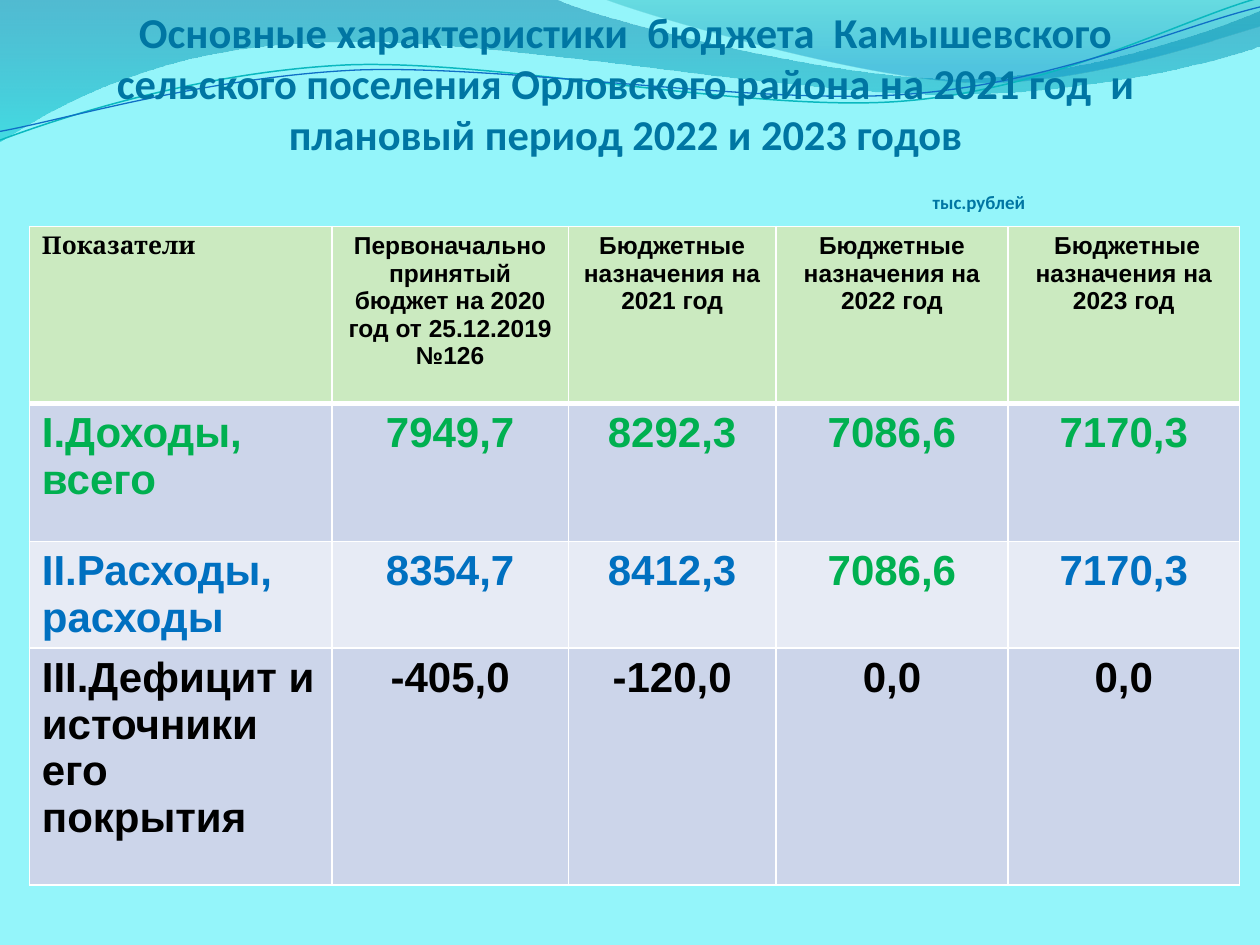
from lxml import etree
from pptx import Presentation
from pptx.dml.color import RGBColor
from pptx.enum.text import MSO_ANCHOR, MSO_AUTO_SIZE, PP_ALIGN
from pptx.oxml import parse_xml
from pptx.oxml.ns import nsdecls, qn
from pptx.util import Pt

CENTER, LEFT = PP_ALIGN.CENTER, PP_ALIGN.LEFT
BOTTOM, NO_AUTOFIT = MSO_ANCHOR.BOTTOM, MSO_AUTO_SIZE.NONE
TITLE_ONLY = 5
WAVE_TILT = -2.7
GREEN, BLUE, BLACK, WHITE = "00B050", "0070C0", "000000", "FFFFFF"
TITLE_COLOR = "0076A3"

FILLED_WAVES = [
    ([(0, 0), (317, -0.7), (343, 12, 478, 45, 546, 45), (614, 45, 690, 19, 720, 6),
      (720.7, 26), (708, 32, 626, 54.5, 537, 54), (446, 54, 275, 20, 185, 24.5),
      (93, 26, 33, 60, -0.7, 81.4)],
     [(0, "0074A1", 45), (100, "00C6CF", 55)]),
    ([(345, -0.7), (366, 8, 491, 45, 554, 47), (616, 49.5, 692, 23, 720, 15), (720, 0)],
     [(0, "00A1A9", 30), (80, "008BBF", 45)]),
]
LINE_WAVES = [
    ([(-1.4, 63.1), (34.2, 51.7, 114.3, 29.4, 199.4, 29.5),
      (284.4, 30.5, 425.8, 67.2, 512, 65.2), (599.2, 63.3, 676, 25.9, 720.6, 15.9)],
     "0AB8BF", 0.85),
    ([(-1.1, 58.1), (33.2, 53.7, 118.2, 32.6, 204.3, 32.7),
      (290.3, 33.7, 429.1, 63.3, 515.3, 61.4), (601.4, 59.4, 675, 29.8, 721.4, 21)],
     "0F6FC6", 0.75),
]

HEADERS = ["Показатели", "Первоначально принятый бюджет на 2020 год от 25.12.2019 №126",
           "Бюджетные назначения на 2021 год", "Бюджетные назначения на 2022 год",
           " Бюджетные назначения на 2023 год"]
BUDGET_ROWS = [
    (["I.Доходы, всего", "7949,7", "8292,3", "7086,6", "7170,3"], [GREEN] * 5, "CCD5EA"),
    (["II.Расходы, расходы", "8354,7", "8412,3", "7086,6", "7170,3"],
     [BLUE, BLUE, BLUE, GREEN, BLUE], "E7EBF5"),
    (["III.Дефицит и источники его покрытия", "-405,0", "-120,0", "0,0", "0,0"],
     [BLACK] * 5, "CCD5EA"),
]
COLUMN_WIDTHS = [173, 135, 118.7, 132.5, 132.5]
ROW_HEIGHTS = [101.3, 79, 60.5, 135.5]


def rgb(color):
    return RGBColor.from_string(color)


def style(paragraph, font_name, size, color, align):
    paragraph.alignment = align
    font = paragraph.font
    font.name, font.size, font.bold = font_name, Pt(size), True
    font.color.rgb = rgb(color)


def add_wave(slide, left, top, segments, closed):
    anchors = [(Pt(left + segment[-2]), Pt(top + segment[-1])) for segment in segments]
    builder = slide.shapes.build_freeform(*anchors[0])
    builder.add_line_segments(anchors[1:], close=closed)
    wave = builder.convert_to_shape()
    wave.shadow.inherit = False
    steps = list(wave.element.spPr.iter(qn("a:lnTo")))
    for step, segment in zip(steps, segments[1:]):
        if len(segment) == 2:
            continue
        curve = etree.Element(qn("a:cubicBezTo"))
        for x, y in zip(segment[::2], segment[1::2]):
            etree.SubElement(curve, qn("a:pt"), x=str(Pt(left + x) - wave.left),
                             y=str(Pt(top + y) - wave.top))
        step.getparent().replace(step, curve)
    return wave


def set_gradient(shape, stops):
    shape.fill.background()
    stop_xml = "".join(
        f'<a:gs pos="{position * 1000}"><a:srgbClr val="{color}">'
        f'<a:alpha val="{alpha * 1000}"/></a:srgbClr></a:gs>'
        for position, color, alpha in stops)
    gradient = parse_xml(f'<a:gradFill {nsdecls("a")} rotWithShape="1"><a:gsLst>{stop_xml}'
                         '</a:gsLst><a:lin ang="5400000" scaled="0"/></a:gradFill>')
    properties = shape.element.spPr
    properties.replace(properties.find(qn("a:noFill")), gradient)


def add_waves(slide, left, top):
    for segments, stops in FILLED_WAVES:
        wave = add_wave(slide, left, top, segments, True)
        set_gradient(wave, stops)
        wave.line.fill.background()
    for segments, color, width in LINE_WAVES:
        wave = add_wave(slide, left, top, segments, False)
        wave.rotation = WAVE_TILT
        wave.fill.background()
        wave.line.color.rgb = rgb(color)
        wave.line.width = Pt(width)


def add_title(slide, left, top, width, height):
    title = slide.shapes.title
    slide.shapes.element.append(title.element)
    title.left, title.top, title.width, title.height = map(Pt, (left, top, width, height))
    frame = title.text_frame
    frame.word_wrap, frame.auto_size, frame.vertical_anchor = True, NO_AUTOFIT, BOTTOM
    frame.margin_left = frame.margin_right = frame.margin_top = 0
    frame.margin_bottom = Pt(17)
    frame.text = ("Основные характеристики  бюджета  Камышевского сельского поселения "
                  "Орловского района на 2021 год  и плановый период 2022 и 2023 годов")
    style(frame.paragraphs[0], "Calibri", 24.3, TITLE_COLOR, CENTER)
    units = frame.add_paragraph()
    units.text = "тыс.рублей"
    style(units, "Calibri", 10.8, TITLE_COLOR, LEFT)
    units.space_before = Pt(18.2)
    units._p.get_or_add_pPr().set("marL", str(Pt(502)))


def set_borders(cell, top, bottom):
    properties = cell._tc.get_or_add_tcPr()
    for side, width in (("L", 1), ("R", 1), ("T", top), ("B", bottom)):
        line = etree.SubElement(properties, qn(f"a:ln{side}"), w=str(Pt(width)))
        fill = etree.SubElement(line, qn("a:solidFill"))
        etree.SubElement(fill, qn("a:srgbClr"), val=WHITE)


def fill_row(table, row, texts, colors, background, size):
    for column, (text, color) in enumerate(zip(texts, colors)):
        cell = table.cell(row, column)
        set_borders(cell, 3 if row == 1 else 1, 3 if row == 0 else 1)
        cell.fill.solid()
        cell.fill.fore_color.rgb = rgb(background)
        cell.text = text
        font_name = "Cambria" if row == column == 0 else "Arial"
        style(cell.text_frame.paragraphs[0], font_name, size, color, CENTER if column else LEFT)


def add_budget_table(slide, left, top):
    table = slide.shapes.add_table(
        len(ROW_HEIGHTS), len(COLUMN_WIDTHS), Pt(left), Pt(top),
        Pt(sum(COLUMN_WIDTHS)), Pt(sum(ROW_HEIGHTS))).table
    for column, width in zip(table.columns, COLUMN_WIDTHS):
        column.width = Pt(width)
    for row, height in zip(table.rows, ROW_HEIGHTS):
        row.height = Pt(height)
    fill_row(table, 0, HEADERS, [BLACK] * 5, "CBEAC0", 14)
    for row, (texts, colors, background) in enumerate(BUDGET_ROWS, 1):
        fill_row(table, row, texts, colors, background, 24)


def main():
    deck = Presentation()
    deck.slide_width, deck.slide_height = Pt(720), Pt(540)
    slide = deck.slides.add_slide(deck.slide_layouts[TITLE_ONLY])
    slide.background.fill.solid()
    slide.background.fill.fore_color.rgb = rgb("94F5FA")
    add_waves(slide, 0, 0)
    add_title(slide, 31, 15, 653, 124)
    add_budget_table(slide, 16.75, 129.3)
    deck.save("out.pptx")


if __name__ == "__main__":
    main()
